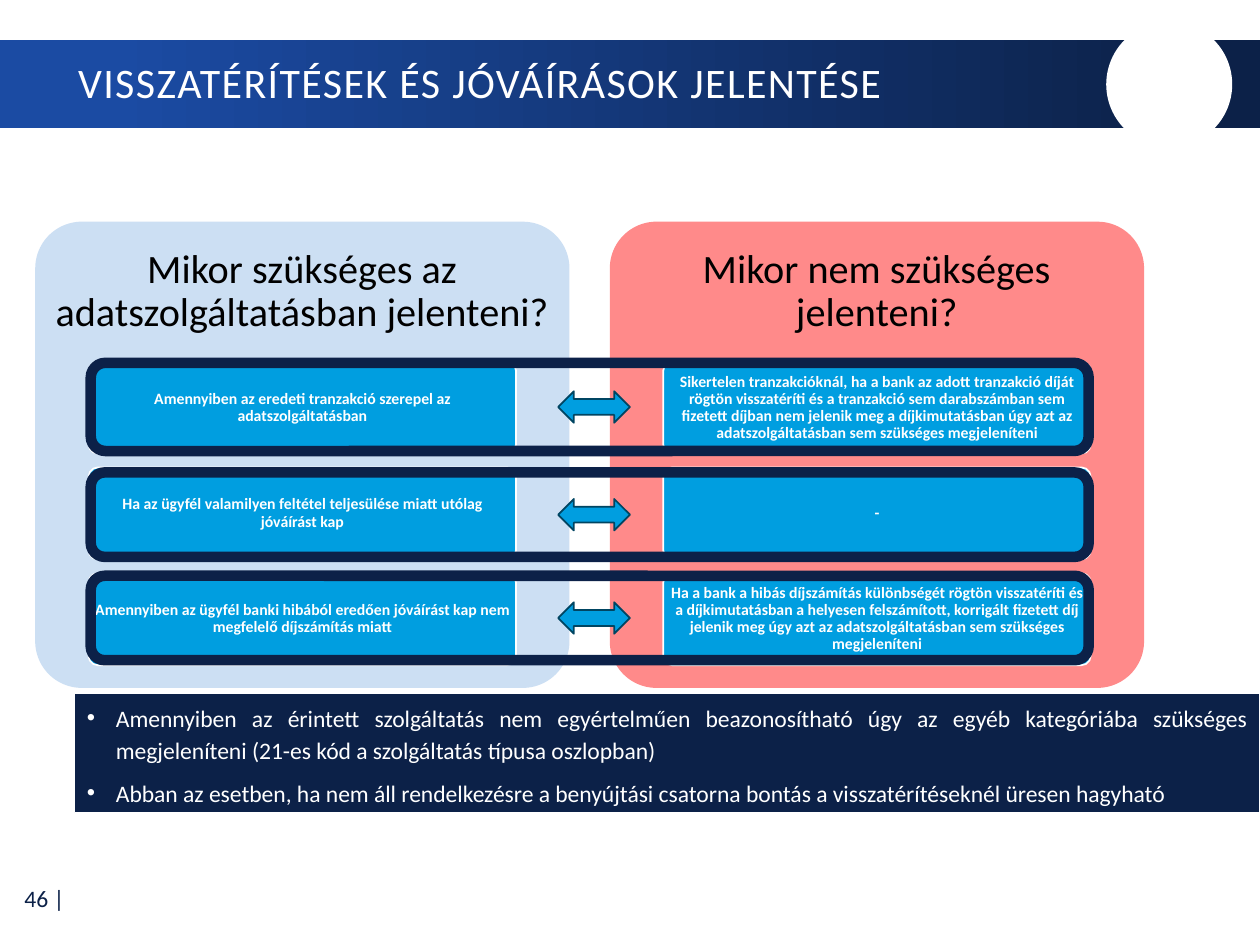
from dataclasses import dataclass

import lxml.etree
import pptx
import pptx.dml.color
import pptx.enum.dml
import pptx.enum.shapes
import pptx.enum.text
import pptx.oxml.ns
import pptx.util

SHAPE = pptx.enum.shapes.MSO_SHAPE
ALIGN = pptx.enum.text.PP_ALIGN
ANCHOR = pptx.enum.text.MSO_ANCHOR
FONT = "Calibri"
COLORS = {
    "navy": "0C2148", "royal": "1B4BA3", "white": "FFFFFF", "black": "000000",
    "sky": "009EE0", "pale": "CCDFF3", "coral": "FF8A8A", "teal": "004562",
}
TITLE = "VISSZATÉRÍTÉSEK ÉS JÓVÁÍRÁSOK JELENTÉSE"
PANELS = [
    ("Mikor szükséges az adatszolgáltatásban jelenteni?", "pale", [
        "Amennyiben az eredeti tranzakció szerepel az adatszolgáltatásban",
        "Ha az ügyfél valamilyen feltétel teljesülése miatt utólag jóváírást kap",
        "Amennyiben az ügyfél banki hibából eredően jóváírást kap nem megfelelő "
        "díjszámítás miatt",
    ]),
    ("Mikor nem szükséges jelenteni?", "coral", [
        "Sikertelen tranzakcióknál, ha a bank az adott tranzakció díját rögtön "
        "visszatéríti és a tranzakció sem darabszámban sem fizetett díjban nem "
        "jelenik meg a díjkimutatásban úgy azt az adatszolgáltatásban sem "
        "szükséges megjeleníteni",
        "-",
        "Ha a bank a hibás díjszámítás különbségét rögtön visszatéríti és a "
        "díjkimutatásban a helyesen felszámított, korrigált fizetett díj jelenik "
        "meg úgy azt az adatszolgáltatásban sem szükséges megjeleníteni",
    ]),
]
NOTES = [
    "Amennyiben az érintett szolgáltatás nem egyértelműen beazonosítható úgy az "
    "egyéb kategóriába szükséges megjeleníteni (21-es kód a szolgáltatás típusa "
    "oszlopban)",
    "Abban az esetben, ha nem áll rendelkezésre a benyújtási csatorna bontás a "
    "visszatérítéseknél üresen hagyható",
]


@dataclass
class Box:
    """A rectangle in inches."""
    left: float
    top: float
    width: float
    height: float

    def inner(self, left, top, width, height):
        """Return a box offset from this one's corner."""
        return Box(self.left + left, self.top + top, width, height)

    def lengths(self):
        """Return the four lengths for a shape."""
        return [pptx.util.Inches(n) for n in (self.left, self.top, self.width, self.height)]


def rgb(name):
    """Return a named colour."""
    return pptx.dml.color.RGBColor.from_string(COLORS[name])


def place(item, box):
    """Move an object to a box."""
    item.left, item.top, item.width, item.height = box.lengths()


def add_shape(page, kind, box, fill=None, line=None, weight=1, radius=None):
    """Add a flat preset shape."""
    shape = page.shapes.add_shape(kind, *box.lengths())
    shape.shadow.inherit = False
    paint(shape, fill, line, weight)
    if radius is not None:
        shape.adjustments[0] = radius
    return shape


def paint(shape, fill, line, weight):
    """Set the fill and outline of a shape."""
    if fill:
        shape.fill.solid()
        shape.fill.fore_color.rgb = rgb(fill)
    else:
        shape.fill.background()
    if line:
        shape.line.color.rgb = rgb(line)
        shape.line.width = pptx.util.Pt(weight)
    else:
        shape.line.fill.background()


def set_frame(shape, anchor, inset_x=0.1, inset_y=0.05):
    """Prepare a text frame and return it."""
    frame = shape.text_frame
    frame.word_wrap = True
    frame.auto_size = pptx.enum.text.MSO_AUTO_SIZE.NONE
    frame.vertical_anchor = anchor
    frame.margin_left = frame.margin_right = pptx.util.Inches(inset_x)
    frame.margin_top = frame.margin_bottom = pptx.util.Inches(inset_y)
    return frame


def write(para, text, size, color, align, spacing=0.9, bold=False):
    """Write one run into a paragraph and return it."""
    para.alignment = align
    para.line_spacing = spacing
    para.space_before = pptx.util.Pt(0)
    span = para.add_run()
    span.text = text
    span.font.name = FONT
    span.font.size = pptx.util.Pt(size)
    span.font.bold = bold
    span.font.color.rgb = rgb(color)
    return span


def build_header(page, box):
    """Draw the gradient banner, its round badge and the title."""
    banner = add_shape(page, SHAPE.RECTANGLE, box, "navy")
    banner.fill.gradient()
    banner.fill.gradient_angle = 0
    for stop, color, position in zip(banner.fill.gradient_stops, ("royal", "navy"), (0.09, 0.95)):
        stop.color.rgb = rgb(color)
        stop.position = position
    add_shape(page, SHAPE.OVAL, box.inner(8.78, -0.15, 1, 1), "white")
    title = page.shapes.title
    place(title, box.inner(0.52, 0.02, 8.32, 0.67))
    page.shapes._spTree.append(title._element)
    para = set_frame(title, ANCHOR.MIDDLE).paragraphs[0]
    span = write(para, TITLE, 24, "white", ALIGN.LEFT)
    span.font._element.set("spc", "80")


def build_panel(page, box, heading, color, answers):
    """Draw a coloured panel with a heading and stacked answers."""
    add_shape(page, SHAPE.ROUNDED_RECTANGLE, box, color, radius=0.1)
    label = page.shapes.add_textbox(*box.inner(0, 0, box.width, 0.3 * box.height).lengths())
    para = set_frame(label, ANCHOR.MIDDLE, 0.1, 0.1).paragraphs[0]
    write(para, heading, 23, "black", ALIGN.CENTER)
    for row, answer in enumerate(answers):
        cell = box.inner(0.1 * box.width, 0.3 * box.height + 0.84 * row, 0.8 * box.width, 0.73)
        shape = add_shape(page, SHAPE.ROUNDED_RECTANGLE, cell, "sky", "white", 1, 0.1)
        para = set_frame(shape, ANCHOR.MIDDLE, 0.03, 0.02).paragraphs[0]
        write(para, answer, 9, "white", ALIGN.CENTER, bold=True)


def build_link(page, box):
    """Frame a pair of answers and join them with a double arrow."""
    add_shape(page, SHAPE.ROUNDED_RECTANGLE, box, line="navy", weight=6)
    arrow = box.inner(3.71, (box.height - 0.25) / 2, 0.57, 0.25)
    add_shape(page, SHAPE.LEFT_RIGHT_ARROW, arrow, "sky", "teal")


def build_notes(page, box):
    """Fill the body placeholder with the bulleted notes."""
    body = page.placeholders[1]
    place(body, box)
    paint(body, "navy", "white", 0.75)
    frame = set_frame(body, ANCHOR.TOP)
    indent = pptx.util.Inches(0.23)
    for index, note in enumerate(NOTES):
        para = frame.add_paragraph() if index else frame.paragraphs[0]
        write(para, note, 13.5, "white", ALIGN.JUSTIFY, 1.15)
        para.space_after = pptx.util.Pt(5.6)
        props = para._p.get_or_add_pPr()
        props.set("marL", str(indent))
        props.set("indent", str(-indent))
        for tag, key, value in (("a:buFont", "typeface", "Arial"), ("a:buChar", "char", "•")):
            lxml.etree.SubElement(props, pptx.oxml.ns.qn(tag)).set(key, value)


def build_page_number(page, box):
    """Write the page number."""
    label = page.shapes.add_textbox(*box.lengths())
    para = set_frame(label, ANCHOR.MIDDLE).paragraphs[0]
    write(para, "46 |", 13.5, "navy", ALIGN.RIGHT, 1)


def main():
    """Build the deck."""
    deck = pptx.Presentation()
    deck.slide_width, deck.slide_height = pptx.util.Inches(10), pptx.util.Inches(7.5)
    page = deck.slides.add_slide(deck.slide_layouts[1])
    build_page_number(page, Box(0.01, 6.94, 0.6, 0.37))
    build_header(page, Box(0, 0.32, 10, 0.7))
    for column, panel in enumerate(PANELS):
        build_panel(page, Box(0.28 + 4.56 * column, 1.76, 4.24, 3.7), *panel)
    for top, height in ((2.88, 0.7), (3.75, 0.67), (4.57, 0.67)):
        build_link(page, Box(0.72, top, 7.92, height))
    build_notes(page, Box(0.59, 5.5, 9.41, 0.95))
    deck.save("out.pptx")


if __name__ == "__main__":
    main()
